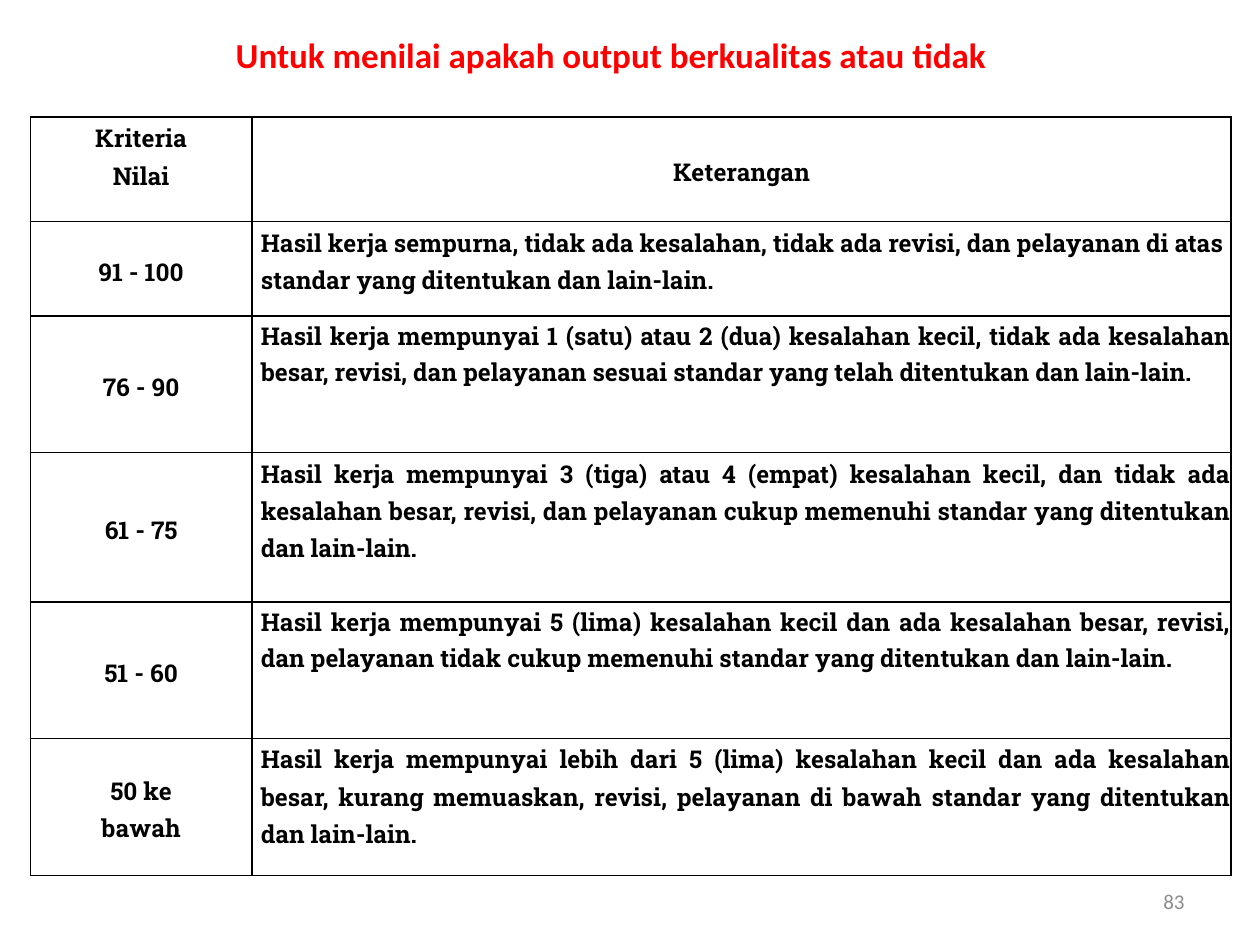
from lxml import etree
from pptx import Presentation
from pptx.dml.color import RGBColor
from pptx.enum.text import MSO_ANCHOR, PP_ALIGN
from pptx.oxml.ns import qn
from pptx.util import Inches, Pt

BLACK = RGBColor(0x00, 0x00, 0x00)
RED = RGBColor(0xFF, 0x00, 0x00)
GRAY = RGBColor(0x8C, 0x8C, 0x8C)
LEFT, MID, RIGHT, FULL = PP_ALIGN.LEFT, PP_ALIGN.CENTER, PP_ALIGN.RIGHT, PP_ALIGN.JUSTIFY
TOP, CENTER = MSO_ANCHOR.TOP, MSO_ANCHOR.MIDDLE

COLS = (1.76, 7.77)
HEAD = 0.83
# score, description, row height, alignment, line spacing, space before
ROWS = (
    ("91 - 100",
     "Hasil kerja sempurna, tidak ada kesalahan, tidak ada revisi, dan pelayanan "
     "di atas standar yang ditentukan dan lain-lain.",
     0.75, LEFT, 1.15, 1.8),
    ("76 - 90",
     "Hasil kerja mempunyai 1 (satu) atau 2 (dua) kesalahan kecil, tidak ada kesalahan "
     "besar, revisi, dan pelayanan sesuai standar yang telah ditentukan dan lain-lain.",
     1.08, FULL, 1.1, 1.8),
    ("61 - 75",
     "Hasil kerja mempunyai 3 (tiga) atau 4 (empat) kesalahan kecil, dan tidak ada "
     "kesalahan besar, revisi, dan pelayanan cukup memenuhi standar yang ditentukan "
     "dan lain-lain.",
     1.19, FULL, 1.15, 3.6),
    ("51 - 60",
     "Hasil kerja mempunyai 5 (lima) kesalahan kecil dan ada kesalahan besar, revisi, "
     "dan pelayanan tidak cukup memenuhi standar yang ditentukan dan lain-lain.",
     1.08, FULL, 1.1, 1.8),
    ("50 ke\vbawah",
     "Hasil kerja mempunyai lebih dari 5 (lima) kesalahan kecil dan ada kesalahan "
     "besar, kurang memuaskan, revisi, pelayanan di bawah standar yang ditentukan "
     "dan lain-lain.",
     1.09, FULL, 1.15, 1.8),
)


def style(para, font, size, color, bold, align):
    para.alignment = align
    for run in para.runs:
        run.font.name = font
        run.font.size = Pt(size)
        run.font.color.rgb = color
        run.font.bold = bold


def add_label(slide, box, text, size, color, bold, align):
    frame = slide.shapes.add_textbox(*map(Inches, box)).text_frame
    frame.word_wrap = True
    frame.vertical_anchor = CENTER
    frame.margin_top = frame.margin_bottom = 0
    frame.text = text
    style(frame.paragraphs[0], "Calibri", size, color, bold, align)


def add_edges(cell):
    props = cell._tc.get_or_add_tcPr()
    for spot, side in enumerate(("lnL", "lnR", "lnT", "lnB")):
        line = etree.Element(qn("a:" + side), w=str(Pt(1)))
        fill = etree.SubElement(line, qn("a:solidFill"))
        etree.SubElement(fill, qn("a:srgbClr"), val=str(BLACK))
        props.insert(spot, line)


def fill_cell(cell, text, align=MID, anchor=CENTER, space=1.15, before=0, indent=0):
    cell.fill.background()
    add_edges(cell)
    cell.margin_top = cell.margin_right = cell.margin_bottom = 0
    cell.margin_left = Inches(indent)
    cell.vertical_anchor = anchor
    cell.text_frame.text = text
    para = cell.text_frame.paragraphs[0]
    para.line_spacing = space
    para.space_before = Pt(before)
    style(para, "Roboto Slab", 14, BLACK, True, align)


def add_scores(slide, box):
    table = slide.shapes.add_table(len(ROWS) + 1, len(COLS), *map(Inches, box)).table
    table.first_row = table.horz_banding = False
    for col, width in zip(table.columns, COLS):
        col.width = Inches(width)
    table.rows[0].height = Inches(HEAD)
    fill_cell(table.cell(0, 0), "Kriteria\vNilai", anchor=TOP, before=3.6)
    fill_cell(table.cell(0, 1), "Keterangan")
    for num, (score, text, height, align, space, before) in enumerate(ROWS, 1):
        table.rows[num].height = Inches(height)
        fill_cell(table.cell(num, 0), score)
        fill_cell(table.cell(num, 1), text, align, TOP, space, before, 0.07)


def main():
    deck = Presentation()
    deck.slide_width, deck.slide_height = Inches(10), Inches(7.5)
    slide = deck.slides.add_slide(deck.slide_layouts[6])
    add_scores(slide, (0.24, 0.93, sum(COLS), HEAD + sum(row[2] for row in ROWS)))
    add_label(slide, (7.17, 6.95, 2.33, 0.4), "83", 12, GRAY, False, RIGHT)
    add_label(slide, (0, 0.23, 9.7, 0.4),
              "Untuk menilai apakah output berkualitas atau tidak", 20, RED, True, MID)
    deck.save("out.pptx")


if __name__ == "__main__":
    main()
